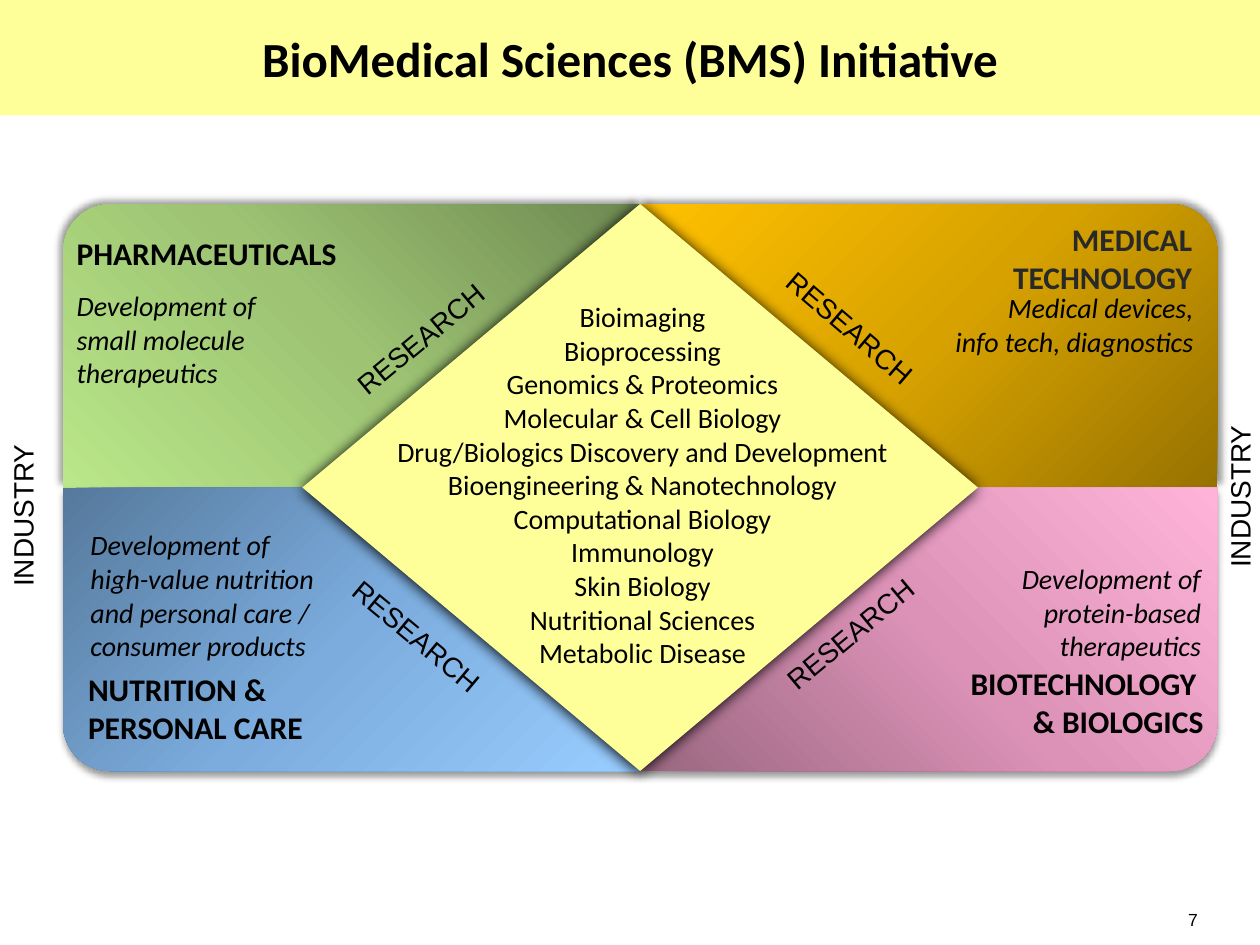
from pptx import Presentation
from pptx.dml.color import RGBColor
from pptx.enum.shapes import MSO_SHAPE
from pptx.enum.text import MSO_ANCHOR, MSO_AUTO_SIZE, PP_ALIGN
from pptx.oxml import parse_xml
from pptx.oxml.ns import nsdecls, qn
from pptx.util import Pt

LEFT, CENTER, RIGHT = PP_ALIGN.LEFT, PP_ALIGN.CENTER, PP_ALIGN.RIGHT
MIDDLE = MSO_ANCHOR.MIDDLE
GROW = MSO_AUTO_SIZE.SHAPE_TO_FIT_TEXT
RECTANGLE, DIAMOND = MSO_SHAPE.RECTANGLE, MSO_SHAPE.DIAMOND
QUADRANT = MSO_SHAPE.ROUND_1_RECTANGLE

BLACK = RGBColor(0x00, 0x00, 0x00)
CHARCOAL = RGBColor(0x29, 0x29, 0x29)
YELLOW = RGBColor(0xFF, 0xFF, 0x99)
GREENS = [RGBColor(0x6E, 0x89, 0x51), RGBColor(0x9D, 0xC3, 0x73), RGBColor(0xBA, 0xE7, 0x89)]
GOLDS = [RGBColor(0x97, 0x72, 0x00), RGBColor(0xD7, 0xA2, 0x00), RGBColor(0xFF, 0xC0, 0x00)]
BLUES = [RGBColor(0x56, 0x79, 0x9C), RGBColor(0x7B, 0xAC, 0xDD), RGBColor(0x99, 0xCC, 0xFF)]
PINKS = [RGBColor(0x9A, 0x67, 0x81), RGBColor(0xDC, 0x92, 0xB7), RGBColor(0xFF, 0xB3, 0xD9)]


def write(shape, lines, size, align=LEFT, font="Calibri", color=BLACK, bold=False, italic=False):
    """One paragraph per line; a newline inside a line is a line break."""
    frame = shape.text_frame
    for index, line in enumerate(lines):
        paragraph = frame.add_paragraph() if index else frame.paragraphs[0]
        paragraph.alignment = align
        for part_index, part in enumerate(line.split("\n")):
            if part_index:
                paragraph.add_line_break()
            run = paragraph.add_run()
            run.text = part
            run.font.name = font
            run.font.size = Pt(size)
            run.font.color.rgb = color
            run.font.bold = bold
            run.font.italic = italic


def add_shadow(shape, alpha, blur, distance, angle):
    shape.shadow.inherit = False
    effects = shape._element.spPr.find(qn("a:effectLst"))
    effects.append(parse_xml(
        f'<a:outerShdw {nsdecls("a")} blurRad="{Pt(blur)}" dist="{Pt(distance)}" '
        f'dir="{angle * 60000}" algn="ctr" rotWithShape="0"><a:srgbClr val="000000">'
        f'<a:alpha val="{alpha * 1000}"/></a:srgbClr></a:outerShdw>'))


presentation = Presentation()
presentation.slide_width, presentation.slide_height = Pt(720), Pt(540)
slide = presentation.slides.add_slide(presentation.slide_layouts[6])

# Four quadrants around a diamond
WIDTH, HEIGHT = 329.8, 162
CENTER_X, CENTER_Y = 365.8, 278.6
group = slide.shapes.add_group_shape()
quadrants = [  # column, row, rotation, colours, shadow angle
    (-1, -1, 270, GREENS, 225),
    (1, -1, 0, GOLDS, 315),
    (-1, 1, 180, BLUES, 90),
    (1, 1, 90, PINKS, 90),
]
for column, row, rotation, colors, shadow_angle in quadrants:
    width, height = (HEIGHT, WIDTH) if rotation % 180 else (WIDTH, HEIGHT)
    left = CENTER_X + column * WIDTH / 2 - width / 2
    top = CENTER_Y + row * HEIGHT / 2 - height / 2
    shape = group.shapes.add_shape(QUADRANT, Pt(left), Pt(top), Pt(width), Pt(height))
    shape.rotation = rotation
    shape.fill.solid()
    shape.line.fill.background()
    stops = "".join(f'<a:gs pos="{position}"><a:srgbClr val="{color}"/></a:gs>'
                    for position, color in zip((0, 50000, 100000), colors))
    properties = shape._element.spPr
    properties.replace(properties.find(qn("a:solidFill")), parse_xml(
        f'<a:gradFill {nsdecls("a")} rotWithShape="1"><a:gsLst>{stops}</a:gsLst>'
        f'<a:lin ang="{225 * 60000}" scaled="0"/></a:gradFill>'))
    add_shadow(shape, 40, 4, 3, shadow_angle)

diamond = group.shapes.add_shape(
    DIAMOND, Pt(CENTER_X - 193), Pt(CENTER_Y - HEIGHT), Pt(386), Pt(2 * HEIGHT))
diamond.fill.solid()
diamond.fill.fore_color.rgb = YELLOW
diamond.line.fill.background()
add_shadow(diamond, 100, 8.5, 1, 90)

# Quadrant headings, descriptions and research fields
heading = {"size": 18, "bold": True}
description = {"size": 16, "italic": True}
fields = ["Bioimaging", "Bioprocessing", "Genomics & Proteomics", "Molecular & Cell Biology",
          "Drug/Biologics Discovery and Development", "Bioengineering & Nanotechnology",
          "Computational Biology", "Immunology\nSkin Biology", "Nutritional Sciences",
          "Metabolic Disease"]
texts = [  # left, top, width, height, lines, style
    (36.7, 130.3, 180, 29, ["PHARMACEUTICALS"], heading),
    (36.7, 161.3, 152.6, 65.5, ["Development of small molecule therapeutics"], description),
    (43.2, 379.4, 198, 51, ["NUTRITION & PERSONAL CARE"], heading),
    (44.6, 298.1, 147.6, 85, ["Development of",
     "high-value nutrition and personal care / consumer products"], description),
    (543.6, 122.4, 144.7, 51, ["MEDICAL", "TECHNOLOGY"],
     {**heading, "align": RIGHT, "color": CHARCOAL}),
    (529.9, 162.7, 159.1, 46, ["Medical devices,", " info tech, diagnostics"],
     {**description, "align": RIGHT}),
    (530.6, 375.8, 164.2, 51, ["BIOTECHNOLOGY ", "& BIOLOGICS"], {**heading, "align": RIGHT}),
    (535, 317.5, 158.4, 65.5, ["Development of protein-based therapeutics"],
     {**description, "align": RIGHT}),
    (187.2, 167.8, 360, 264.2, fields, {"size": 16, "align": CENTER}),
]
for left, top, width, height, lines, style in texts:
    box = slide.shapes.add_textbox(Pt(left), Pt(top), Pt(width), Pt(height))
    box.text_frame.word_wrap = True
    box.text_frame.auto_size = GROW
    write(box, lines, **style)

# Title band
band = slide.shapes.add_shape(RECTANGLE, Pt(0), Pt(0), Pt(720), Pt(66))
band.shadow.inherit = False
band.fill.solid()
band.fill.fore_color.rgb = YELLOW
band.line.fill.background()
band.text_frame.vertical_anchor = MIDDLE
write(band, ["BioMedical Sciences (BMS) Initiative"], 28, CENTER, bold=True)

# Turned labels and page number
labels = [  # text, left, top, width, height, rotation, size
    ("INDUSTRY", -35.3, 280.8, 96.5, 26.6, 270, 16),
    ("INDUSTRY", 660.2, 270, 96.5, 26.6, 270, 16),
    ("RESEARCH", 186.5, 350.6, 103.7, 26.6, 39.9, 16),
    ("RESEARCH", 434.2, 174.2, 103.7, 26.6, 40.5, 16),
    ("RESEARCH", 188.6, 180, 103.7, 26.6, 320.2, 16),
    ("RESEARCH", 434.2, 348.5, 103.7, 26.6, 320.2, 16),
    ("7", 671.8, 516.2, 20.2, 19.4, 0, 10),
]
for text, left, top, width, height, rotation, size in labels:
    box = slide.shapes.add_textbox(Pt(left), Pt(top), Pt(width), Pt(height))
    box.rotation = rotation
    box.text_frame.word_wrap = False
    box.text_frame.auto_size = GROW
    write(box, [text], size, font="Arial")

presentation.save("out.pptx")
